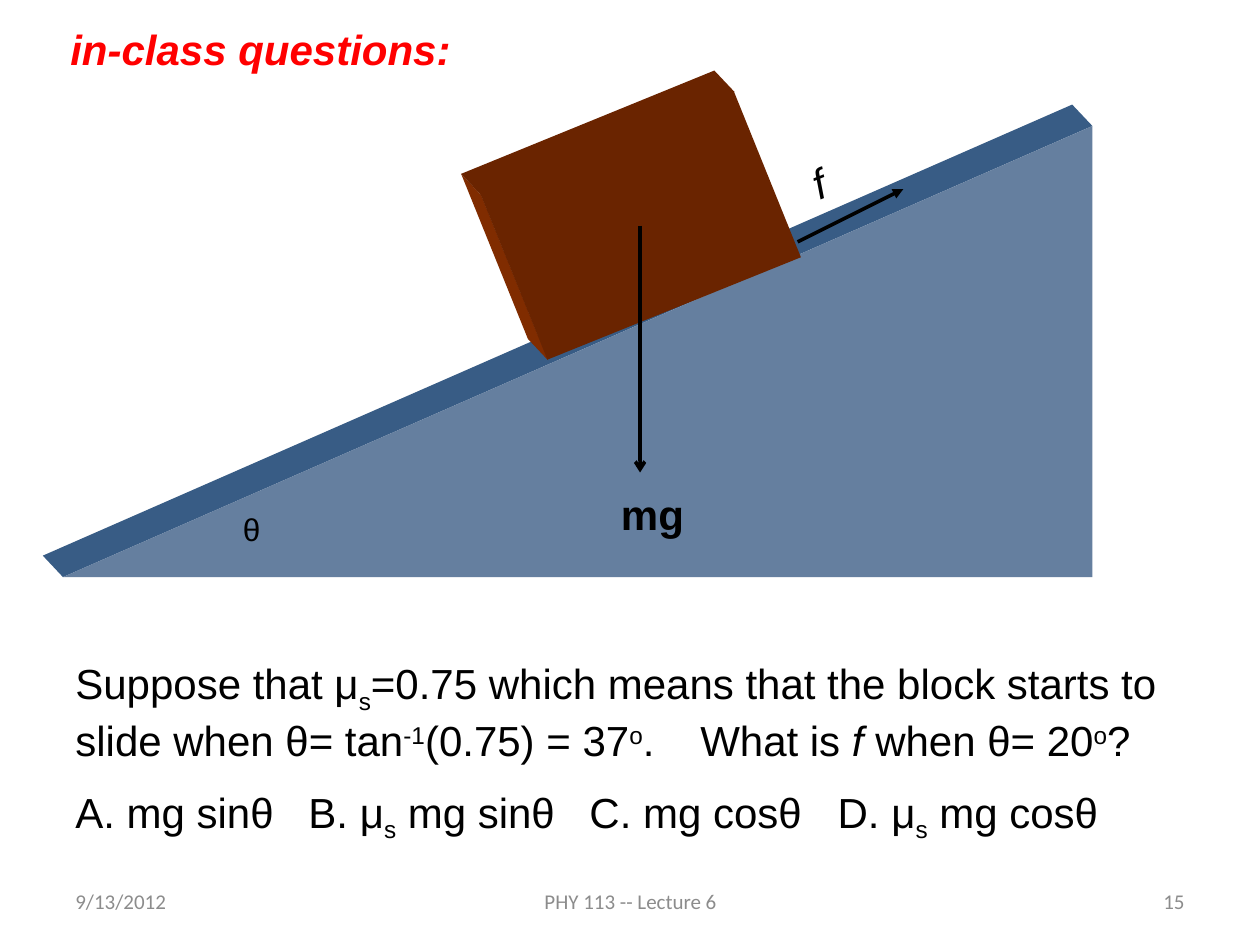
from pptx import Presentation
from pptx.dml.color import RGBColor
from pptx.enum.shapes import MSO_CONNECTOR as Conn, MSO_SHAPE as Shape
from pptx.enum.text import MSO_ANCHOR as Anchor, PP_ALIGN as Align
from pptx.oxml.ns import qn
from pptx.util import Inches, Pt
from lxml.etree import SubElement as Sub

BLACK = RGBColor(0, 0, 0)
RED = RGBColor(0xFF, 0, 0)
GRAY = RGBColor(0x8C, 0x8C, 0x8C)
RAMP = RGBColor(0x65, 0x7F, 0x9F)
RAMP_EDGE = RGBColor(0x38, 0x5C, 0x85)
BLOCK = RGBColor(0x6A, 0x24, 0x00)
BLOCK_EDGE = RGBColor(0x80, 0x2C, 0x00)

DEPTH = (-0.16, -0.17)  # shift from a front face to its back face
SUB, SUP = -25, 30


def paint(shape, color):
    shape.shadow.inherit = False
    shape.fill.solid()
    shape.fill.fore_color.rgb = color
    shape.line.fill.background()


def solid(slide, kind, at, color):
    shape = slide.shapes.add_shape(kind, *map(Inches, at))
    paint(shape, color)
    return shape


def side(slide, front, color):
    """Face swept from a front edge to the same edge at the back."""
    back = [(x + DEPTH[0], y + DEPTH[1]) for x, y in reversed(front)]
    points = [(Inches(x), Inches(y)) for x, y in front + back]
    form = slide.shapes.build_freeform(*points[0])
    form.add_line_segments(points[1:], close=True)
    paint(form.convert_to_shape(), color)


def arrow(slide, start, end, head):
    ends = map(Inches, start + end)
    line = slide.shapes.add_connector(Conn.STRAIGHT, *ends)
    line.line.color.rgb = BLACK
    line.line.width = Pt(2)
    Sub(line.line._get_or_add_ln(), qn("a:tailEnd"), type=head)
    Sub(line._element.spPr, qn("a:effectLst"))


def box(slide, at):
    shape = slide.shapes.add_textbox(*map(Inches, at))
    shape.text_frame.word_wrap = True
    return shape


def style(para, size, color, name="Arial", bold=False, italic=False):
    font = para.font
    font.name, font.size, font.color.rgb = name, Pt(size), color
    font.bold, font.italic = bold, italic


def label(slide, at, text, size=24, color=BLACK, **look):
    shape = box(slide, at)
    para = shape.text_frame.paragraphs[0]
    para.text = text
    style(para, size, color, **look)
    return shape


def rich(para, parts, stops):
    """Fill a paragraph with plain strings and (text, shift) pairs; 0 is italic."""
    tabs = Sub(para._p.get_or_add_pPr(), qn("a:tabLst"))
    for stop in stops:
        Sub(tabs, qn("a:tab"), pos=str(Inches(stop)), algn="l")
    style(para, 24, BLACK)
    for part in parts:
        text, shift = (part, None) if isinstance(part, str) else part
        run = para.add_run()
        run.text = text
        if shift == 0:
            run.font.italic = True
        elif shift:
            run.font._element.set("baseline", str(shift * 1000))


def scene(slide):
    # Ramp with its sloping top face
    side(slide, [(0.5, 4.58), (8.67, 1)], RAMP_EDGE)
    ramp = solid(slide, Shape.RIGHT_TRIANGLE, (0.5, 1, 8.17, 3.58), RAMP)
    ramp._element.spPr.get_or_add_xfrm().set("flipH", "1")

    # Tilted block with its left and top faces
    left, low, right = (3.82, 1.55), (4.35, 2.86), (5.83, 0.73)
    side(slide, [left, low], BLOCK_EDGE)
    side(slide, [left, right], BLOCK)
    block = solid(slide, Shape.RECTANGLE, (4, 1.08, 2.17, 1.42), BLOCK)
    block.rotation = 338

    # Forces and angle
    label(slide, (1.83, 4, 0.58, 0.5), "θ", 18)
    arrow(slide, (6.33, 1.92), (7.17, 1.5), "triangle")
    label(slide, (6.33, 1.08, 0.92, 0.5), "f", italic=True).rotation = 338
    arrow(slide, (5.08, 1.79), (5.08, 3.75), "arrow")
    label(slide, (4.83, 3.83, 1.08, 0.5), "mg", bold=True)


def question(slide):
    frame = box(slide, (0.5, 5.17, 9.17, 1.51)).text_frame
    rich(frame.paragraphs[0], [
        "Suppose that μ", ("s", SUB),
        "=0.75 which means that the block starts to slide when θ= tan",
        ("-1", SUP), "(0.75) = 37", ("o", SUP), ".\tWhat is ", ("f ", 0),
        "when θ= 20", ("o", SUP), "?"], [4.96])
    choices = frame.add_paragraph()
    rich(choices, [
        "A. mg sinθ\tB. μ", ("s", SUB), " mg sinθ\tC. mg cosθ\tD. μ",
        ("s", SUB), " mg cosθ"], [1.85, 4.08, 6.05])
    choices.space_before = Pt(12)


def footer(slide):
    for x, width, text, align in (
            (0.5, 2.33, "9/13/2012", Align.LEFT),
            (3.42, 3.17, "PHY 113 -- Lecture 6", Align.CENTER),
            (7.17, 2.33, "15", Align.RIGHT)):
        note = label(slide, (x, 6.95, width, 0.4), text, 12, GRAY, name="Calibri")
        note.text_frame.vertical_anchor = Anchor.MIDDLE
        note.text_frame.paragraphs[0].alignment = align


def main():
    deck = Presentation()
    deck.slide_width, deck.slide_height = Inches(10), Inches(7.5)
    slide = deck.slides.add_slide(deck.slide_layouts[6])
    footer(slide)
    label(slide, (0.46, 0.14, 9.25, 0.5), "in-class questions:",
          color=RED, bold=True, italic=True)
    scene(slide)
    question(slide)
    deck.save("out.pptx")


if __name__ == "__main__":
    main()
